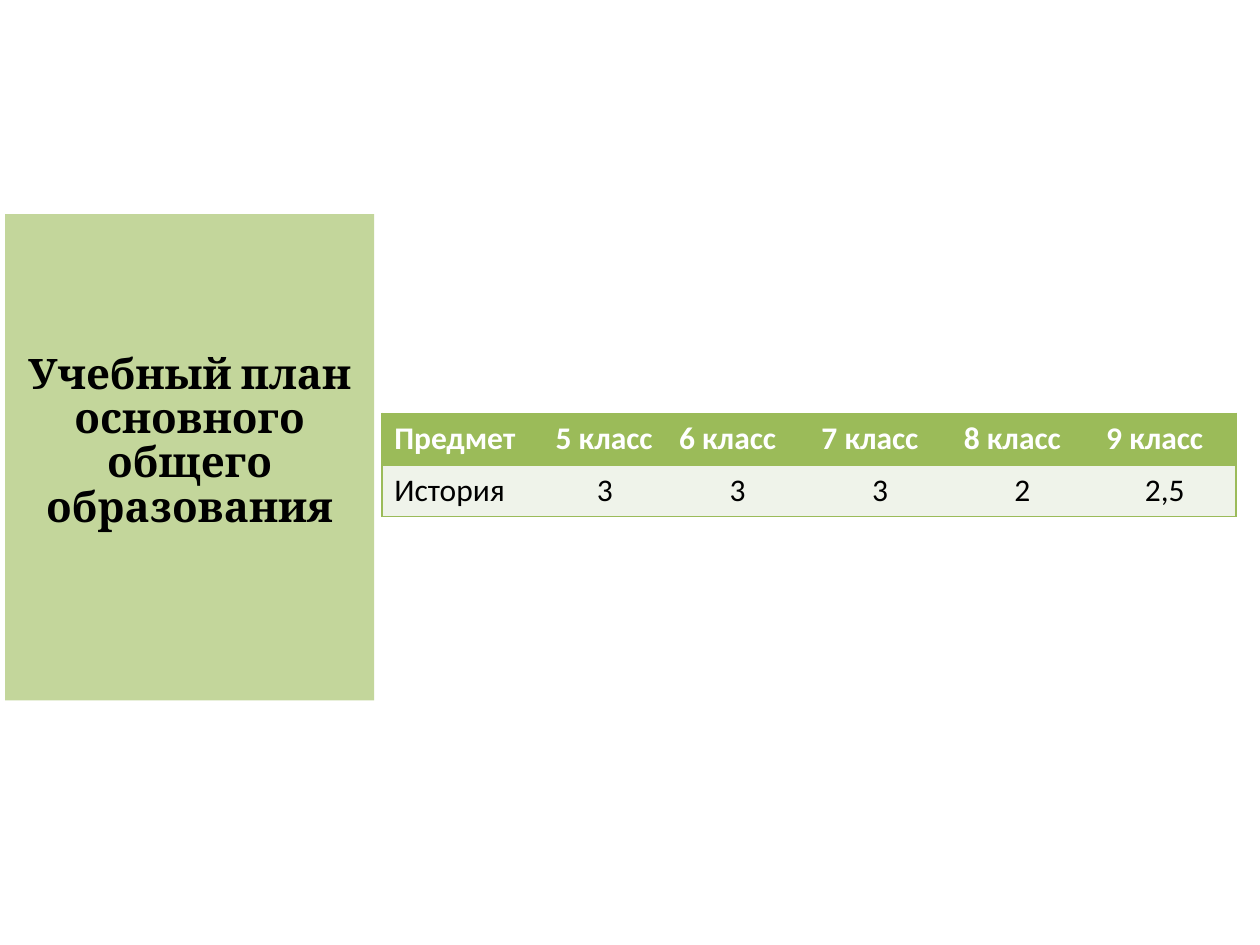
from lxml.etree import SubElement
from pptx import Presentation
from pptx.dml.color import RGBColor
from pptx.enum.text import MSO_ANCHOR as Anchor, PP_ALIGN as Align
from pptx.oxml.ns import qn
from pptx.util import Inches, Pt

GREEN = "9BBB59"
HEADERS = ["Предмет", "5 класс", "6 класс", "7 класс", "8 класс", "9 класс"]
HOURS = ["История", "3", "3", "3", "2", "2,5"]
COLUMN_WIDTHS = [1.28, 0.98] + [1.13] * 4
ROW_HEIGHT = 0.41


def paint(fill, color):
    fill.solid()
    fill.fore_color.rgb = RGBColor.from_string(color)


def style(para, font_name, size, color, bold):
    for span in para.runs:
        font = span.font
        font.name, font.size, font.bold = font_name, Pt(size), bold
        font.color.rgb = RGBColor.from_string(color)


def add_heading(page, text):
    box = page.shapes.title
    box.left, box.top = Inches(0.04), Inches(1.7)
    box.width, box.height = Inches(2.93), Inches(3.86)
    paint(box.fill, "C3D69B")
    frame = box.text_frame
    frame.text = text
    frame.word_wrap = True
    frame.vertical_anchor = Anchor.MIDDLE
    frame.margin_left = frame.margin_right = Inches(0.05)
    frame.margin_bottom = Inches(0.29)
    para = frame.paragraphs[0]
    para.alignment = Align.CENTER
    para.line_spacing = 0.88
    style(para, "Cambria", 24, "000000", True)


def set_borders(cell, colors):
    properties = cell._tc.get_or_add_tcPr()
    for index, (side, color) in enumerate(zip("LRTB", colors)):
        line = properties.makeelement(qn(f"a:ln{side}"), {"w": str(Pt(1))})
        if color:
            fill = SubElement(line, qn("a:solidFill"))
            SubElement(fill, qn("a:srgbClr"), val=color)
        else:
            SubElement(line, qn("a:noFill"))
        properties.insert(index, line)


def add_plan_table(page, rows):
    table = page.shapes.add_table(
        len(rows), len(HEADERS), Inches(3.03), Inches(3.28),
        Inches(sum(COLUMN_WIDTHS)), Inches(ROW_HEIGHT * len(rows)),
    ).table
    for column, width in zip(table.columns, COLUMN_WIDTHS):
        column.width = Inches(width)
    last = len(HEADERS) - 1
    for row_index, values in enumerate(rows):
        table.rows[row_index].height = Inches(ROW_HEIGHT)
        header = row_index == 0
        for column_index, value in enumerate(values):
            cell = table.cell(row_index, column_index)
            cell.text = value
            paint(cell.fill, GREEN if header else "EFF3EA")
            left = GREEN if column_index == 0 else None
            right = GREEN if column_index == last else None
            set_borders(cell, [left, right, GREEN, GREEN])
            para = cell.text_frame.paragraphs[0]
            if not header and column_index > 0:
                para.alignment = Align.CENTER
            style(para, "Calibri", 18, "FFFFFF" if header else "000000", header)


def main():
    deck = Presentation()
    deck.slide_width, deck.slide_height = Inches(10), Inches(7.5)
    page = deck.slides.add_slide(deck.slide_layouts.get_by_name("Title Only"))
    add_heading(page, "Учебный план основного общего образования")
    add_plan_table(page, [HEADERS, HOURS])
    deck.save("out.pptx")


if __name__ == "__main__":
    main()
